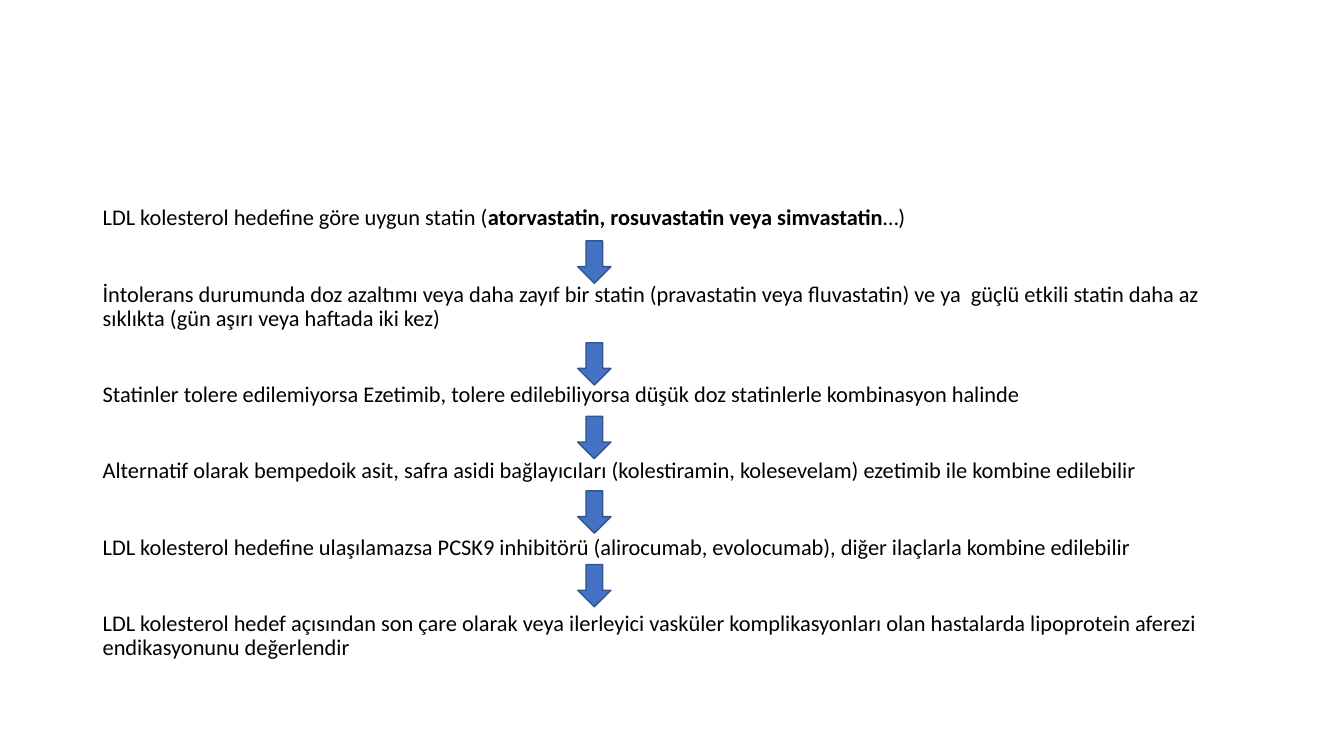
from pptx import Presentation
from pptx.dml.color import RGBColor
from pptx.enum.shapes import MSO_SHAPE as Shape
from pptx.util import Inches, Pt

# Content: each step is a list of (text, bold) runs
STEPS = [
    [("LDL kolesterol hedefine göre uygun statin (", False),
     ("atorvastatin, rosuvastatin veya simvastatin", True),
     ("…)", False)],
    [("İntolerans durumunda doz azaltımı veya daha zayıf bir statin "
      "(pravastatin veya fluvastatin) ve ya  güçlü etkili statin daha az "
      "sıklıkta (gün aşırı veya haftada iki kez)", False)],
    [("Statinler tolere edilemiyorsa Ezetimib, tolere edilebiliyorsa "
      "düşük doz statinlerle kombinasyon halinde", False)],
    [("Alternatif olarak bempedoik asit, safra asidi bağlayıcıları "
      "(kolestiramin, kolesevelam) ezetimib ile kombine edilebilir", False)],
    [("LDL kolesterol hedefine ulaşılamazsa PCSK9 inhibitörü "
      "(alirocumab, evolocumab), diğer ilaçlarla kombine edilebilir", False)],
    [("LDL kolesterol hedef açısından son çare olarak veya ilerleyici "
      "vasküler komplikasyonları olan hastalarda lipoprotein aferezi "
      "endikasyonunu değerlendir", False)],
]
TOPS = [2.39, 3.4, 4.13, 4.87, 5.6]  # one arrow between each pair of steps

BLACK = RGBColor(0x00, 0x00, 0x00)
BLUE = RGBColor(0x44, 0x72, 0xC4)
NAVY = RGBColor(0x32, 0x54, 0x91)

deck = Presentation()
deck.slide_width, deck.slide_height = Inches(13.33), Inches(7.5)
slide = deck.slides.add_slide(deck.slide_layouts[6])

# Steps
box = slide.shapes.add_textbox(Inches(0.92), Inches(2), Inches(11.5), Inches(4.76))
frame = box.text_frame
frame.word_wrap = True
for i, step in enumerate(STEPS):
    para = frame.paragraphs[0] if i == 0 else frame.add_paragraph()
    para.line_spacing = 0.9
    para.space_before = Pt(37.25 if i else 10)  # leaves room for an arrow
    para.font.name, para.font.size = "Calibri", Pt(16)
    para.font.color.rgb = BLACK
    for text, bold in step:
        run = para.add_run()
        run.text = text
        if bold:
            run.font.bold = True

# Arrows
for top in TOPS:
    arrow = slide.shapes.add_shape(
        Shape.DOWN_ARROW, Inches(5.73), Inches(top), Inches(0.33), Inches(0.42))
    arrow.shadow.inherit = False
    arrow.fill.solid()
    arrow.fill.fore_color.rgb = BLUE
    arrow.line.color.rgb = NAVY
    arrow.line.width = Pt(1)

deck.save("out.pptx")
